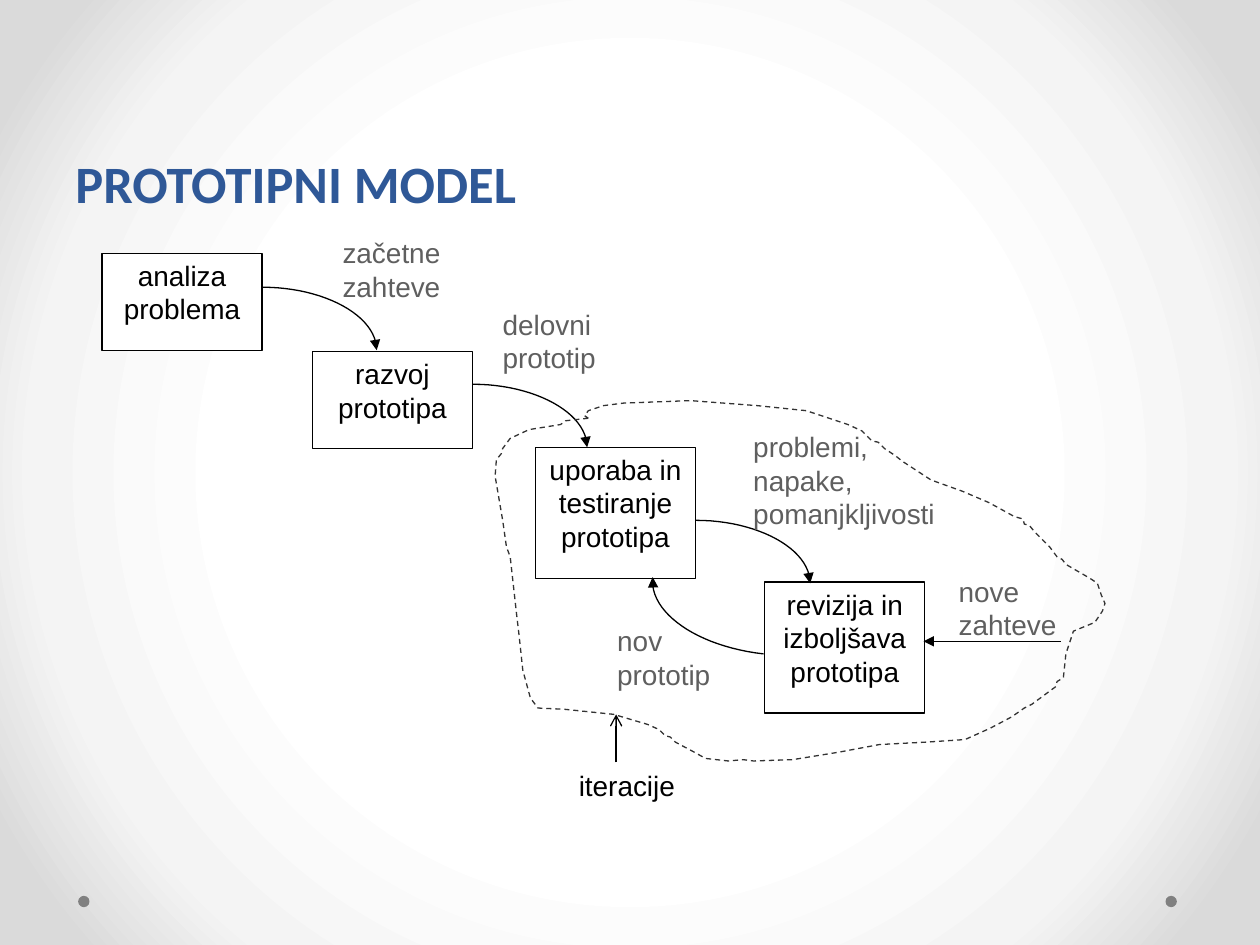
import dataclasses

import pptx
import pptx.dml.color
import pptx.enum.shapes
import pptx.enum.text
import pptx.oxml
import pptx.oxml.ns
import pptx.util


@dataclasses.dataclass(frozen=True)
class Theme:
    heading: str = "2F5897"
    ink: str = "000000"
    label: str = "5F5F5F"
    outline: str = "333333"
    paper: str = "FFFFFF"
    dot: str = "808080"
    backdrop: tuple = ((50, "FFFFFF"), (76, "F4F4F4"), (92, "DADADA"))
    heading_font: str = "Calibri"
    body_font: str = "Arial"
    heading_size: int = 30
    body_size: int = 16
    line_width: float = 0.75


THEME = Theme()
SHAPES = pptx.enum.shapes.MSO_SHAPE
ALIGN = pptx.enum.text.PP_ALIGN
ANCHOR = pptx.enum.text.MSO_ANCHOR
NAMESPACE = pptx.oxml.ns.nsdecls("a")

# Layout is planned in inches
BOXES = [
    (0.81, 2.01, 1.27, 0.77, ["analiza", "problema"]),
    (2.48, 2.79, 1.27, 0.77, ["razvoj prototipa"]),
    (4.25, 3.55, 1.27, 1.04, ["uporaba in testiranje prototipa"]),
    (6.07, 4.62, 1.27, 1.04, ["revizija in izboljšava", "prototipa"]),
]
LABELS = [
    (2.62, 1.82, 1.09, 0.77, ["začetne", "zahteve"]),
    (3.89, 2.39, 1.09, 0.77, ["delovni prototip"]),
    (5.88, 3.36, 1.87, 0.96, ["problemi, napake, pomanjkljivosti"]),
    (7.51, 4.51, 1.27, 0.96, ["nove zahteve"]),
    (4.80, 4.90, 1.09, 0.77, ["nov", "prototip"]),
]
STEP_STARTS = [(2.08, 2.28), (3.75, 3.05), (5.52, 4.13)]
RETURN_CURVE = [(6.06, 5.19), (5.53, 5.13), (5.15, 4.86), (5.18, 4.58)]
ITERATION_OUTLINE = [
    (4.67, 3.32), (4.49, 3.34), (4.45, 3.37), (4.2, 3.41), (4.05, 3.48),
    (3.99, 3.56), (3.98, 3.6), (3.94, 3.65), (3.93, 3.78), (3.99, 4.13),
    (4.02, 4.34), (4.05, 4.42), (4.1, 4.87), (4.12, 5.04), (4.15, 5.32),
    (4.21, 5.54), (4.27, 5.62), (4.48, 5.63), (4.87, 5.67), (5.14, 5.75),
    (5.23, 5.79), (5.28, 5.84), (5.32, 5.85), (5.36, 5.89), (5.51, 5.97),
    (5.6, 6.02), (5.78, 6.04), (5.9, 6.03), (5.98, 6.04), (6.29, 6.03),
    (6.66, 5.97), (6.98, 5.91), (7.36, 5.89), (7.66, 5.87), (7.86, 5.78),
    (8.03, 5.69), (8.13, 5.62), (8.19, 5.59), (8.38, 5.45), (8.39, 5.41),
    (8.44, 5.38), (8.46, 5.19), (8.52, 5.01), (8.69, 4.94), (8.75, 4.85),
    (8.77, 4.79), (8.74, 4.72), (8.71, 4.63), (8.65, 4.59), (8.46, 4.48),
    (8.43, 4.44), (8.39, 4.42), (8.33, 4.34), (8.21, 4.22), (8.17, 4.17),
    (8.13, 4.16), (8.12, 4.12), (8.05, 4.1), (7.85, 3.99), (7.64, 3.9),
    (7.39, 3.81), (7.16, 3.66), (7.11, 3.62), (7.02, 3.56), (6.97, 3.51),
    (6.92, 3.5), (6.84, 3.42), (6.73, 3.37), (6.4, 3.26), (6.01, 3.22),
    (5.48, 3.18), (4.95, 3.2), (4.79, 3.22), (4.67, 3.26), (4.64, 3.3),
]


def length(inches):
    return pptx.util.Cm(inches * 2.54)


def color(value):
    return pptx.dml.color.RGBColor.from_string(value)


def paint_backdrop(page):
    page.background.fill.gradient()
    old = page.element.xpath(".//a:gradFill")[0]
    stops = "".join(
        f'<a:gs pos="{percent * 1000}"><a:srgbClr val="{value}"/></a:gs>'
        for percent, value in THEME.backdrop)
    old.getparent().replace(old, pptx.oxml.parse_xml(
        f'<a:gradFill {NAMESPACE} rotWithShape="1"><a:gsLst>{stops}</a:gsLst>'
        '<a:path path="circle"><a:fillToRect l="50000" t="50000" r="50000" b="50000"/>'
        '</a:path></a:gradFill>'))


def write_text(shape, paragraphs, *, font=THEME.body_font, size=THEME.body_size,
               ink=THEME.ink, bold=False, align=ALIGN.LEFT, anchor=ANCHOR.TOP,
               inset=None, spacing=None):
    frame = shape.text_frame
    frame.word_wrap = True
    frame.vertical_anchor = anchor
    if inset is not None:
        frame.margin_left = frame.margin_right = length(inset)
        frame.margin_top = frame.margin_bottom = length(inset)
    for index, text in enumerate(paragraphs):
        para = frame.add_paragraph() if index else frame.paragraphs[0]
        para.alignment = align
        if spacing:
            para.line_spacing = pptx.util.Pt(spacing)
        span = para.add_run()
        span.text = text
        span.font.name = font
        span.font.size = pptx.util.Pt(size)
        span.font.bold = bold
        span.font.color.rgb = color(ink)


def style_line(shape, ink=THEME.ink, head=None, dashed=False):
    shape.line.color.rgb = color(ink)
    shape.line.width = pptx.util.Pt(THEME.line_width)
    if dashed:
        shape.line.dash_style = pptx.enum.dml.MSO_LINE.DASH
    if head:
        shape.line._get_or_add_ln().append(
            pptx.oxml.parse_xml(f'<a:tailEnd {NAMESPACE} type="{head}"/>'))


def add_text(page, left, top, width, height, paragraphs, **text_format):
    box = page.shapes.add_textbox(*map(length, (left, top, width, height)))
    write_text(box, paragraphs, **text_format)


def add_box(page, left, top, width, height, paragraphs):
    box = page.shapes.add_shape(SHAPES.RECTANGLE, *map(length, (left, top, width, height)))
    box.shadow.inherit = False
    box.fill.solid()
    box.fill.fore_color.rgb = color(THEME.paper)
    style_line(box)
    write_text(box, paragraphs, align=ALIGN.CENTER, inset=0.04)


def add_dot(page, left, top, diameter):
    dot = page.shapes.add_shape(SHAPES.OVAL, *map(length, (left, top, diameter, diameter)))
    dot.shadow.inherit = False
    dot.fill.solid()
    dot.fill.fore_color.rgb = color(THEME.dot)
    dot.line.fill.background()


def add_outline(page, points, close=False, **line_format):
    start, *rest = [(length(x), length(y)) for x, y in points]
    builder = page.shapes.build_freeform(*start, scale=1.0)
    builder.add_line_segments(rest, close=close)
    outline = builder.convert_to_shape()
    outline.shadow.inherit = False
    outline.fill.background()
    style_line(outline, **line_format)


def curve_points(controls, steps=24):
    """Points along a cubic Bézier curve."""
    for step in range(steps + 1):
        t = step / steps
        weights = ((1 - t) ** 3, 3 * t * (1 - t) ** 2, 3 * t * t * (1 - t), t ** 3)
        yield tuple(sum(w * point[axis] for w, point in zip(weights, controls))
                    for axis in (0, 1))


def add_arrow(page, start, end, head):
    arrow = page.shapes.add_connector(
        pptx.enum.shapes.MSO_CONNECTOR.STRAIGHT, *map(length, start + end))
    style_line(arrow, head=head)
    arrow._element.spPr.append(pptx.oxml.parse_xml(f"<a:effectLst {NAMESPACE}/>"))


def main():
    deck = pptx.Presentation()
    deck.slide_width, deck.slide_height = length(10), length(7.5)
    page = deck.slides.add_slide(deck.slide_layouts[6])

    # Backdrop and heading
    paint_backdrop(page)
    for left in (9.25, 0.62):
        add_dot(page, left, 7.11, 0.09)
    add_text(page, 0.5, 0, 9, 1.75, ["PROTOTIPNI MODEL"], font=THEME.heading_font,
             size=THEME.heading_size, ink=THEME.heading, bold=True,
             anchor=ANCHOR.BOTTOM, spacing=58)

    # Process steps
    for box in BOXES:
        add_box(page, *box)

    # Arrows between the steps
    for x, y in STEP_STARTS:
        controls = [(x, y), (x + 0.5, y), (x + 0.91, y + 0.23), (x + 0.91, y + 0.5)]
        add_outline(page, curve_points(controls), head="triangle")
    add_outline(page, curve_points(RETURN_CURVE), head="triangle")
    add_arrow(page, (8.42, 5.09), (7.33, 5.09), "triangle")

    # Iteration area and labels
    add_outline(page, ITERATION_OUTLINE, close=True, ink=THEME.outline, dashed=True)
    for label in LABELS:
        add_text(page, *label, ink=THEME.label)
    add_text(page, 4.07, 6.05, 1.81, 0.77, ["iteracije"], align=ALIGN.CENTER)
    add_arrow(page, (4.89, 6.05), (4.89, 5.67), "arrow")

    deck.save("out.pptx")


if __name__ == "__main__":
    main()
